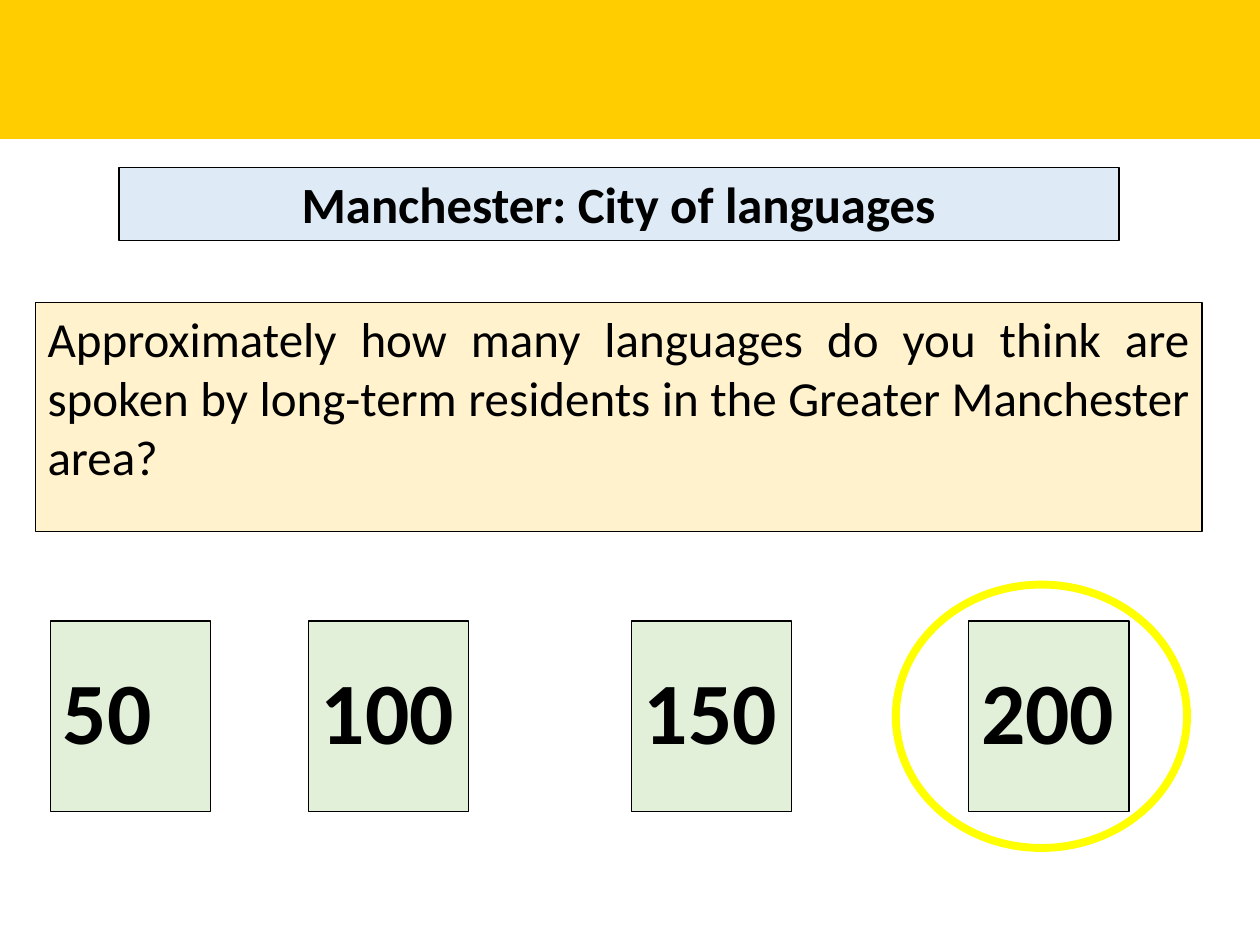
from dataclasses import dataclass
from pptx import Presentation
from pptx.dml.color import RGBColor
from pptx.enum.shapes import MSO_SHAPE as Preset
from pptx.enum.text import MSO_ANCHOR as Anchor, PP_ALIGN as Align
from pptx.util import Cm, Pt


@dataclass(frozen=True)
class Theme:
    font: str = "Calibri"
    banner: str = "FFCD00"
    heading: str = "DEEBF7"
    question: str = "FFF2CC"
    answer: str = "E2F0D9"
    ring: str = "FFFF00"
    ink: str = "000000"
    heading_size: float = 29
    question_size: float = 28
    answer_size: float = 50
    border: float = 0.75
    ring_width: float = 4.5


THEME = Theme()


def add_panel(slide, box, preset=Preset.RECTANGLE, fill=None, line=None, width=THEME.border):
    panel = slide.shapes.add_shape(preset, *(Cm(length) for length in box))
    panel.shadow.inherit = False
    if fill:
        panel.fill.solid()
        panel.fill.fore_color.rgb = RGBColor.from_string(fill)
    else:
        panel.fill.background()
    if line:
        panel.line.color.rgb = RGBColor.from_string(line)
        panel.line.width = Pt(width)
    else:
        panel.line.fill.background()
    return panel


def add_text_panel(slide, box, text, fill, size, align, anchor, bold=False, spacing=None):
    frame = add_panel(slide, box, fill=fill, line=THEME.ink).text_frame
    frame.word_wrap = True
    frame.vertical_anchor = anchor
    paragraph = frame.paragraphs[0]
    paragraph.alignment = align
    paragraph.line_spacing = spacing
    run = paragraph.add_run()
    run.text = text
    run.font.name = THEME.font
    run.font.size = Pt(size)
    run.font.bold = bold
    run.font.color.rgb = RGBColor.from_string(THEME.ink)


def add_banner(slide, box):
    add_panel(slide, box, fill=THEME.banner)


def add_heading(slide, box, heading):
    add_text_panel(slide, box, heading, THEME.heading, THEME.heading_size,
                   Align.CENTER, Anchor.BOTTOM, bold=True, spacing=0.9)


def add_question(slide, box, question):
    add_text_panel(slide, box, question, THEME.question, THEME.question_size,
                   Align.JUSTIFY, Anchor.TOP)


def add_answers(slide, box, answers, correct):
    left, top, width, height = box
    card_width = 3.23
    ring_width, ring_height = 5.87, 5.31
    for answer, offset in answers.items():
        card = (left + offset, top, card_width, height)
        add_text_panel(slide, card, answer, THEME.answer, THEME.answer_size,
                       Align.JUSTIFY, Anchor.MIDDLE, bold=True, spacing=0.9)
    ring = (left + width - ring_width, top - (ring_height - height) / 2,
            ring_width, ring_height)
    ring_left = left + answers[correct] - 1.47
    add_panel(slide, (ring_left, *ring[1:]), Preset.OVAL,
              line=THEME.ring, width=THEME.ring_width)


def main():
    deck = Presentation()
    deck.slide_width, deck.slide_height = Cm(25.4), Cm(19.05)
    slide = deck.slides.add_slide(deck.slide_layouts[6])
    add_banner(slide, (0, 0, 25.4, 2.8))
    add_heading(slide, (2.4, 3.38, 20.16, 1.47), "Manchester: City of languages")
    add_question(slide, (0.71, 6.1, 23.52, 4.62),
                 "Approximately how many languages do you think are spoken by "
                 "long-term residents in the Greater Manchester area?")
    answers = {"50": 0, "100": 5.2, "150": 11.71, "200": 18.51}
    add_answers(slide, (1.02, 12.52, 22.91, 3.84), answers, correct="200")
    deck.save("out.pptx")


if __name__ == "__main__":
    main()
